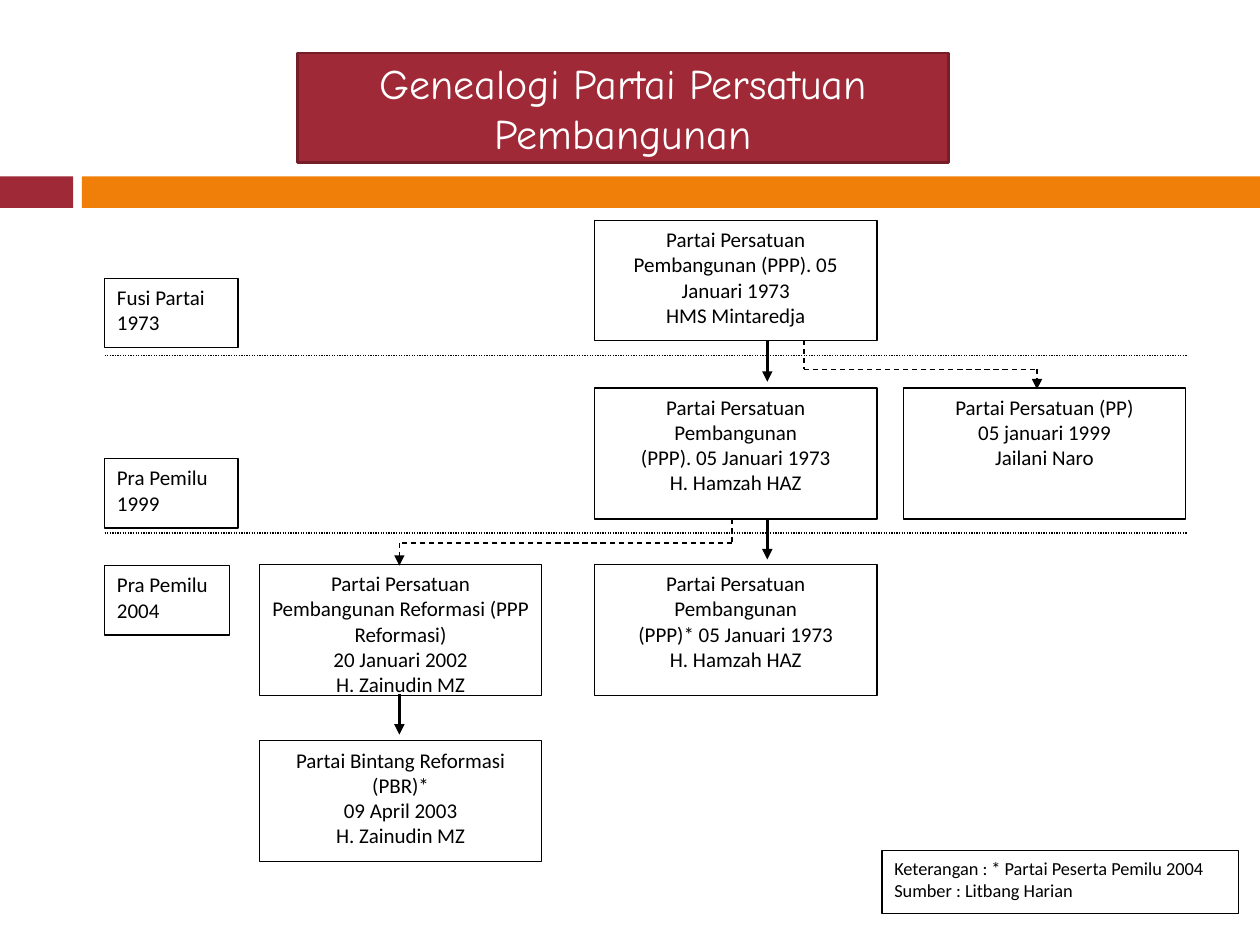
from itertools import pairwise

from lxml.etree import SubElement
from pptx import Presentation
from pptx.dml.color import RGBColor
from pptx.enum.dml import MSO_LINE
from pptx.enum.shapes import MSO_CONNECTOR, MSO_SHAPE
from pptx.enum.text import MSO_ANCHOR, MSO_AUTO_SIZE, PP_ALIGN
from pptx.oxml.ns import qn
from pptx.util import Inches, Pt

RED = RGBColor(0x9F, 0x29, 0x36)
DARK_RED = RGBColor(0x76, 0x1E, 0x28)
ORANGE = RGBColor(0xF0, 0x7F, 0x09)
BLACK = RGBColor(0, 0, 0)
WHITE = RGBColor(0xFF, 0xFF, 0xFF)

COLS = (2.06, 4.72, 7.17)
ROWS = ((1.75, 0.95), (3.08, 1.04), (4.48, 1.04), (5.88, 0.96))
BOX_W = 2.24
LEFT, RIGHT = 0.83, 9.42
TRUNK_X, BRANCH_X = 6.09, 3.17

PARTIES = (
    (1, 0, "Partai Persatuan Pembangunan (PPP). 05 Januari 1973\nHMS Mintaredja"),
    (1, 1, "Partai Persatuan Pembangunan\n(PPP). 05 Januari 1973\nH. Hamzah HAZ"),
    (2, 1, "Partai Persatuan (PP)\n05 januari 1999\nJailani Naro"),
    (0, 2, "Partai Persatuan Pembangunan Reformasi (PPP Reformasi)\n"
           "20 Januari 2002\nH. Zainudin MZ"),
    (1, 2, "Partai Persatuan Pembangunan\n(PPP)* 05 Januari 1973\nH. Hamzah HAZ"),
    (0, 3, "Partai Bintang Reformasi (PBR)*\n09 April 2003\nH. Zainudin MZ"),
)
PERIODS = (
    (2.21, 1.06, "Fusi Partai 1973"),
    (3.64, 1.06, "Pra Pemilu 1999"),
    (4.49, 0.99, "Pra Pemilu 2004"),
)
SUCCESSIONS = ((TRUNK_X, 2.7, 3.03), (TRUNK_X, 4.12, 4.44), (BRANCH_X, 5.51, 5.83))
SPLITS = (
    ((6.38, 2.7), (6.38, 2.93), (8.23, 2.93), (8.23, 3.09)),
    ((5.81, 4.12), (5.81, 4.31), (BRANCH_X, 4.31), (BRANCH_X, 4.49)),
)


def add_bar(s, x, w, color):
    """Add one piece of the coloured band under the title."""
    sp = s.shapes.add_shape(MSO_SHAPE.RECTANGLE, *map(Inches, (x, 1.4, w, 0.25)))
    sp.shadow.inherit = False
    sp.fill.solid()
    sp.fill.fore_color.rgb = color
    sp.line.fill.background()


def format_text(tf, text, font, size, color, align, after=0):
    """Fill a text frame and format each paragraph and run."""
    tf.text = text
    tf.word_wrap = True
    tf.auto_size = MSO_AUTO_SIZE.NONE
    for p in tf.paragraphs:
        p.alignment = align
        p.space_after = Pt(after)
        for r in p.runs:
            r.font.name = font
            r.font.size = Pt(size)
            r.font.color.rgb = color


def set_title(s, text):
    """Place and format the title placeholder."""
    sp = s.shapes.title
    sp.left, sp.top, sp.width, sp.height = map(Inches, (2.36, 0.42, 5.17, 0.87))
    sp.fill.solid()
    sp.fill.fore_color.rgb = RED
    sp.line.color.rgb = DARK_RED
    sp.line.width = Pt(1.5)
    format_text(sp.text_frame, text, "Comic Neue", 24, WHITE, PP_ALIGN.CENTER)
    sp.text_frame.vertical_anchor = MSO_ANCHOR.MIDDLE


def add_box(s, x, y, w, h, text, align=PP_ALIGN.LEFT, size=12, after=0):
    """Add a white outlined box with text."""
    sp = s.shapes.add_shape(MSO_SHAPE.RECTANGLE, *map(Inches, (x, y, w, h)))
    sp.shadow.inherit = False
    sp.fill.solid()
    sp.fill.fore_color.rgb = WHITE
    sp.line.color.rgb = BLACK
    sp.line.width = Pt(0.75)
    format_text(sp.text_frame, text, "Calibri", size, BLACK, align, after)
    sp.text_frame.vertical_anchor = MSO_ANCHOR.TOP


def add_route(s, points, width=0.75, dash=None, arrow=True):
    """Join points with straight lines, with an arrowhead on the last."""
    for start, end in pairwise(points):
        c = s.shapes.add_connector(MSO_CONNECTOR.STRAIGHT, *map(Inches, start + end))
        c.line.color.rgb = BLACK
        c.line.width = Pt(width)
        if dash:
            c.line.dash_style = dash
        if arrow and end == points[-1]:
            SubElement(c.line._get_or_add_ln(), qn("a:tailEnd"), type="triangle")
        SubElement(c._element.spPr, qn("a:effectLst"))


def main():
    """Build the party genealogy slide."""
    prs = Presentation()
    prs.slide_width, prs.slide_height = Inches(10), Inches(7.5)
    s = prs.slides.add_slide(prs.slide_layouts[5])
    set_title(s, "Genealogi Partai Persatuan Pembangunan")
    add_bar(s, 0, 0.58, RED)
    add_bar(s, 0.65, 9.35, ORANGE)
    for col, row, text in PARTIES:
        y, h = ROWS[row]
        add_box(s, COLS[col], y, BOX_W, h, text, PP_ALIGN.CENTER)
    for y, w, text in PERIODS:
        add_box(s, LEFT, y, w, 0.55, text, after=10)
    for y in (2.82, 4.23):
        add_route(s, ((LEFT, y), (RIGHT, y)), dash=MSO_LINE.ROUND_DOT, arrow=False)
    for x, top, bottom in SUCCESSIONS:
        add_route(s, ((x, top), (x, bottom)), width=1.75)
    for points in SPLITS:
        add_route(s, points, dash=MSO_LINE.DASH)
    note = "Keterangan : * Partai Peserta Pemilu 2004\nSumber : Litbang Harian"
    add_box(s, 7, 6.75, 2.83, 0.5, note, size=10.5)
    prs.save("out.pptx")


if __name__ == "__main__":
    main()
